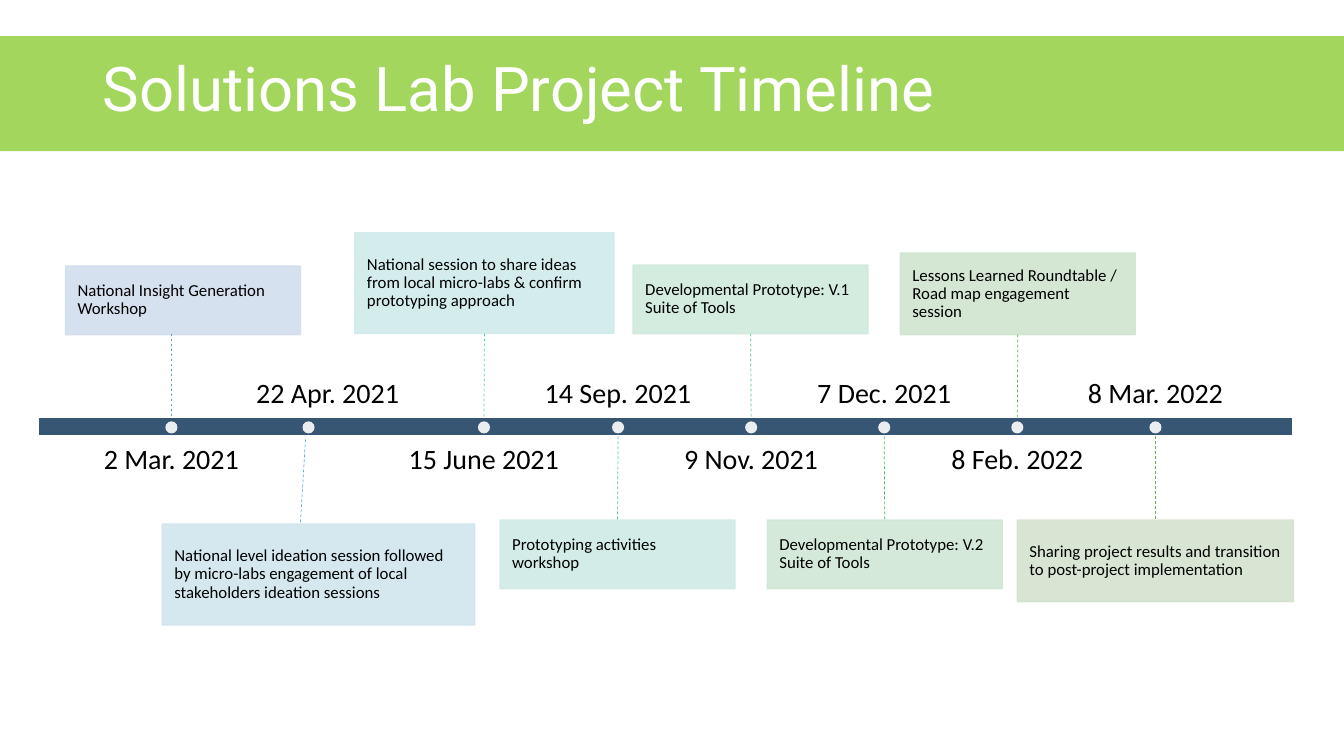
from pptx import Presentation
from pptx import util as u
from pptx.dml.color import RGBColor
from pptx.enum import dml, shapes, text
from pptx.oxml.ns import qn
from lxml import etree

COLORS = {"banner": "A3D65C", "bar": "365673", "white": "FFFFFF", "black": "000000"}
BAR_TOP, BAR_HEIGHT = 4.14, 0.19
DOT_TOP, DOT_SIZE = 4.18, 0.12
DATE_WIDTH, DATE_HEIGHT = 2.11, 0.55
DATE_ABOVE, DATE_BELOW = 3.51, 4.42

MILESTONES = [
    (1.7, 1.7, "2 Mar. 2021", (0.65, 2.64, 2.33, 0.68), "D2DEEF", "5B9BD5",
     (1.7, 3.31, 1.7, 4.14), "National Insight Generation Workshop"),
    (3.06, 3.25, "22 Apr. 2021", (1.61, 5.2, 3.1, 1), "D1E5EE", "57B7D1",
     (3.03, 4.36, 2.98, 5.18),
     "National level ideation session followed by micro-labs engagement of local "
     "stakeholders ideation sessions"),
    (4.8, 4.8, "15 June 2021", (3.52, 2.31, 2.57, 1), "D1EBEC", "53CCC5", None,
     "National session to share ideas from local micro-labs & confirm prototyping approach"),
    (6.13, 6.13, "14 Sep. 2021", (4.96, 5.16, 2.33, 0.68), "D0EAE5", "4FC7A0", None,
     "Prototyping activities workshop"),
    (7.45, 7.45, "9 Nov. 2021", (6.28, 2.63, 2.33, 0.68), "D0E9DD", "4CC27B", None,
     "Developmental Prototype: V.1 Suite of Tools"),
    (8.77, 8.77, "7 Dec. 2021", (7.61, 5.16, 2.33, 0.68), "D0E7D5", "48BD58", None,
     "Developmental Prototype: V.2 Suite of Tools"),
    (10.09, 10.09, "8 Feb. 2022", (8.93, 2.51, 2.33, 0.81), "D0E5CF", "55B646", None,
     "Lessons Learned Roundtable / Road map engagement session"),
    (11.46, 11.46, "8 Mar. 2022", (10.09, 5.16, 2.74, 0.81), "D5E3CF", "70AD47", None,
     "Sharing project results and transition to post-project implementation"),
]


class TimelineSlide:
    font = "Calibri"

    def __init__(self, slide):
        self.shapes = slide.shapes

    def set_text(self, shape, wording, size, anchor, inset=None, font=None,
                 color=COLORS["black"], align=text.PP_ALIGN.LEFT):
        frame = shape.text_frame
        frame.word_wrap = True
        frame.vertical_anchor = anchor
        if inset is not None:
            frame.margin_left = frame.margin_right = u.Inches(inset)
            frame.margin_top = frame.margin_bottom = u.Inches(inset)
        paragraph = frame.paragraphs[0]
        paragraph.text = wording
        paragraph.alignment = align
        paragraph.line_spacing = 0.9
        paragraph.font.name = font or self.font
        paragraph.font.size = u.Pt(size)
        paragraph.font.color.rgb = RGBColor.from_string(color)

    def label(self, box, wording, size, anchor, **style):
        holder = self.shapes.add_textbox(*map(u.Inches, box))
        self.set_text(holder, wording, size, anchor, **style)

    def block(self, box, fill, line=None, weight=1, opacity=100,
              kind=shapes.MSO_SHAPE.RECTANGLE):
        shape = self.shapes.add_shape(kind, *map(u.Inches, box))
        shape.shadow.inherit = False
        shape.fill.solid()
        shape.fill.fore_color.rgb = RGBColor.from_string(fill)
        if line:
            shape.line.color.rgb = RGBColor.from_string(line)
            shape.line.width = u.Pt(weight)
        else:
            shape.line.fill.background()
        if opacity < 100:
            for color in shape._element.spPr.iter(qn("a:srgbClr")):
                etree.SubElement(color, qn("a:alpha")).set("val", str(opacity * 1000))
        return shape

    def card(self, box, fill, wording):
        card = self.block(box, fill, line=fill, opacity=90)
        self.set_text(card, wording, 12, text.MSO_ANCHOR.MIDDLE, inset=0.12)
        return card

    def stem(self, ends, color):
        stem = self.shapes.add_connector(shapes.MSO_CONNECTOR.STRAIGHT, *map(u.Inches, ends))
        stem.line.color.rgb = RGBColor.from_string(color)
        stem.line.width = u.Pt(0.5)
        stem.line.dash_style = dml.MSO_LINE.DASH
        etree.SubElement(stem._element.spPr, qn("a:effectLst"))
        return stem

    def dot(self, center):
        self.block((center - DOT_SIZE / 2, DOT_TOP, DOT_SIZE, DOT_SIZE), COLORS["white"],
                   opacity=90, kind=shapes.MSO_SHAPE.OVAL)

    def date(self, center, above, wording):
        top = DATE_ABOVE if above else DATE_BELOW
        anchor = text.MSO_ANCHOR.BOTTOM if above else text.MSO_ANCHOR.TOP
        self.label((center - DATE_WIDTH / 2, top, DATE_WIDTH, DATE_HEIGHT), wording, 20,
                   anchor, inset=0, align=text.PP_ALIGN.CENTER)

    def milestone(self, center, date_center, date, box, fill, color, ends, wording):
        top, height = box[1], box[3]
        card_above = top < BAR_TOP
        self.date(date_center, not card_above, date)
        card = self.card(box, fill, wording)
        if ends:
            self.stem(ends, color)
        elif card_above:
            stem = self.stem((center, top + height, center, BAR_TOP), color)
            stem.begin_connect(card, 2)
        else:
            stem = self.stem((center, BAR_TOP + BAR_HEIGHT, center, top), color)
            stem.end_connect(card, 0)
        self.dot(center)


def main():
    deck = Presentation()
    deck.slide_width, deck.slide_height = u.Inches(13.33), u.Inches(7.5)
    timeline = TimelineSlide(deck.slides.add_slide(deck.slide_layouts[6]))
    timeline.block((0, 0.36, 13.33, 1.14), COLORS["banner"])
    timeline.label((0.92, 0.43, 9.72, 0.95), "Solutions Lab Project Timeline", 44,
                   text.MSO_ANCHOR.MIDDLE, font="Roboto", color=COLORS["white"])
    timeline.block((0.38, BAR_TOP, 12.45, BAR_HEIGHT), COLORS["bar"],
                   line=COLORS["white"], weight=1.5)
    for milestone in MILESTONES:
        timeline.milestone(*milestone)
    deck.save("out.pptx")


if __name__ == "__main__":
    main()
